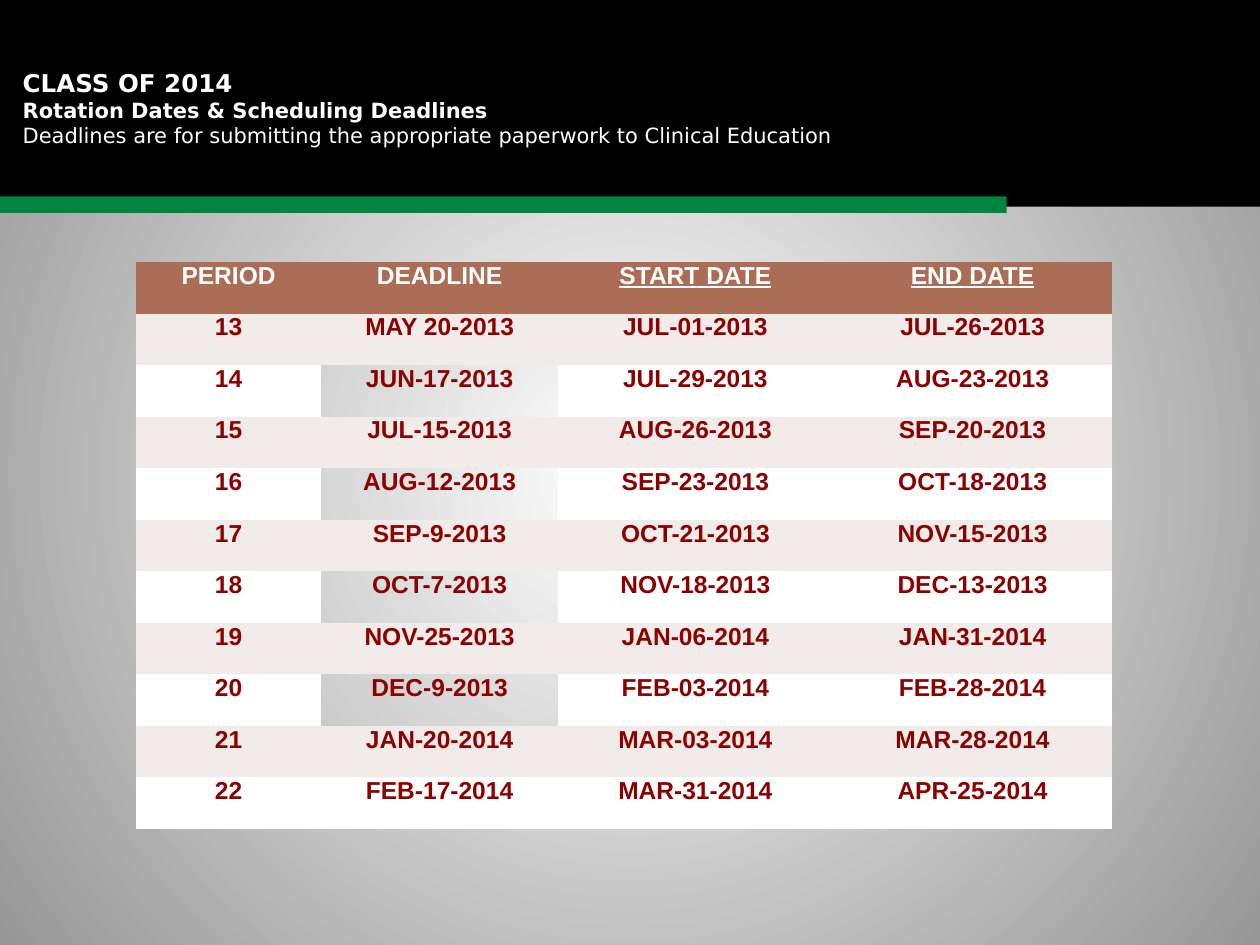
import pptx
import pptx.util
import pptx.dml.color
import pptx.enum.shapes
import pptx.enum.text
import pptx.oxml
import pptx.oxml.ns

Inches, Pt = pptx.util.Inches, pptx.util.Pt
RGBColor = pptx.dml.color.RGBColor
PP_ALIGN = pptx.enum.text.PP_ALIGN

WHITE = RGBColor(0xFF, 0xFF, 0xFF)
BLACK = RGBColor(0x00, 0x00, 0x00)
EDGE_GRAY = RGBColor(0x97, 0x97, 0x97)
GREEN = RGBColor(0x00, 0x85, 0x3E)
BROWN = RGBColor(0xAC, 0x6D, 0x56)
PALE_ROSE = RGBColor(0xF1, 0xEB, 0xE9)
DARK_RED = RGBColor(0x8C, 0x00, 0x00)

NO_STYLE_NO_GRID = "{2D5ABB26-0587-4C30-8999-92F81FD0307C}"
COLUMN_WIDTHS = (1.47, 1.88, 2.18, 2.22)
HEADINGS = ("PERIOD", "DEADLINE", "START DATE", "END DATE")
ROTATIONS = (
    ("13", "MAY 20-2013", "JUL-01-2013", "JUL-26-2013"),
    ("14", "JUN-17-2013", "JUL-29-2013", "AUG-23-2013"),
    ("15", "JUL-15-2013", "AUG-26-2013", "SEP-20-2013"),
    ("16", "AUG-12-2013", "SEP-23-2013", "OCT-18-2013"),
    ("17", "SEP-9-2013", "OCT-21-2013", "NOV-15-2013"),
    ("18", "OCT-7-2013", "NOV-18-2013", "DEC-13-2013"),
    ("19", "NOV-25-2013", "JAN-06-2014", "JAN-31-2014"),
    ("20", "DEC-9-2013", "FEB-03-2014", "FEB-28-2014"),
    ("21", "JAN-20-2014", "MAR-03-2014", "MAR-28-2014"),
    ("22", "FEB-17-2014", "MAR-31-2014", "APR-25-2014"),
)
# Text, size, bold
TITLE_LINES = (
    ("CLASS OF 2014", 14, True),
    ("Rotation Dates & Scheduling Deadlines", 12, True),
    ("Deadlines are for submitting the appropriate paperwork to Clinical Education",
     12, False),
)


def set_background(slide):
    """Radial gradient, white in the centre and gray at the edges."""
    fill = slide.background.fill
    fill.gradient()
    for stop, position, color in zip(fill.gradient_stops, (0, 1), (WHITE, EDGE_GRAY)):
        stop.position = position
        stop.color.rgb = color
    linear = slide.background._cSld.find(".//" + pptx.oxml.ns.qn("a:lin"))
    linear.getparent().replace(linear, pptx.oxml.parse_xml(
        '<a:path %s path="circle"><a:fillToRect l="50000" t="50000" r="50000" '
        'b="50000"/></a:path>' % pptx.oxml.ns.nsdecls("a")))


def add_band(slide, box, color):
    band = slide.shapes.add_shape(
        pptx.enum.shapes.MSO_SHAPE.RECTANGLE, *map(Inches, box))
    band.shadow.inherit = False
    band.fill.solid()
    band.fill.fore_color.rgb = color
    band.line.fill.background()


def place_title(slide, box):
    title = slide.shapes.title
    title.left, title.top, title.width, title.height = map(Inches, box)
    slide.shapes._spTree.append(title._element)  # in front of the bands
    frame = title.text_frame
    frame.word_wrap = True
    frame.auto_size = pptx.enum.text.MSO_AUTO_SIZE.NONE
    frame.vertical_anchor = pptx.enum.text.MSO_ANCHOR.MIDDLE
    frame.margin_left = frame.margin_right = Inches(0.1)
    frame.margin_top = Inches(0.05)
    frame.margin_bottom = Inches(0.34)
    frame.text = "\n".join(line[0] for line in TITLE_LINES)
    for paragraph, (_, size, bold) in zip(frame.paragraphs, TITLE_LINES):
        paragraph.alignment = PP_ALIGN.LEFT
        font = paragraph.font
        font.name, font.size, font.bold = "DejaVu Sans", Pt(size), bold
        font.color.rgb = WHITE


def fill_cell(cell, text, fill_color, text_color, underline=False):
    cell.margin_left = cell.margin_right = Inches(0.07)
    cell.margin_top = cell.margin_bottom = 0
    if fill_color is None:
        cell.fill.background()
    else:
        cell.fill.solid()
        cell.fill.fore_color.rgb = fill_color
    cell.text = text
    paragraph = cell.text_frame.paragraphs[0]
    paragraph.alignment = PP_ALIGN.CENTER
    font = paragraph.font
    font.name, font.size, font.bold = "Arial", Pt(14), True
    font.underline = underline
    font.color.rgb = text_color


def add_schedule(slide, box):
    table = slide.shapes.add_table(
        len(ROTATIONS) + 1, len(HEADINGS), *map(Inches, box)).table
    table._tbl.tblPr.find(pptx.oxml.ns.qn("a:tableStyleId")).text = NO_STYLE_NO_GRID
    table.horz_banding = False
    for column, width in zip(table.columns, COLUMN_WIDTHS):
        column.width = Inches(width)

    # Heading row, dates underlined
    for index, heading in enumerate(HEADINGS):
        fill_cell(table.cell(0, index), heading, BROWN, WHITE, index >= 2)

    # Banded rows; deadlines in white rows are see-through, except in the last
    for row, rotation in enumerate(ROTATIONS, start=1):
        for index, text in enumerate(rotation):
            color = PALE_ROSE if row % 2 else WHITE
            if index == 1 and color == WHITE and row < len(ROTATIONS):
                color = None
            fill_cell(table.cell(row, index), text, color, DARK_RED)


def main():
    deck = pptx.Presentation()
    deck.slide_width, deck.slide_height = Inches(10), Inches(7.5)
    slide = deck.slides.add_slide(deck.slide_layouts[5])
    set_background(slide)
    add_band(slide, (0, 0, 10, 1.64), BLACK)
    add_band(slide, (0, 1.56, 7.99, 0.13), GREEN)
    add_schedule(slide, (1.08, 2.08, 7.75, 4.5))
    place_title(slide, (0.08, 0.48, 6.71, 1.04))
    deck.save("out.pptx")


if __name__ == "__main__":
    main()
